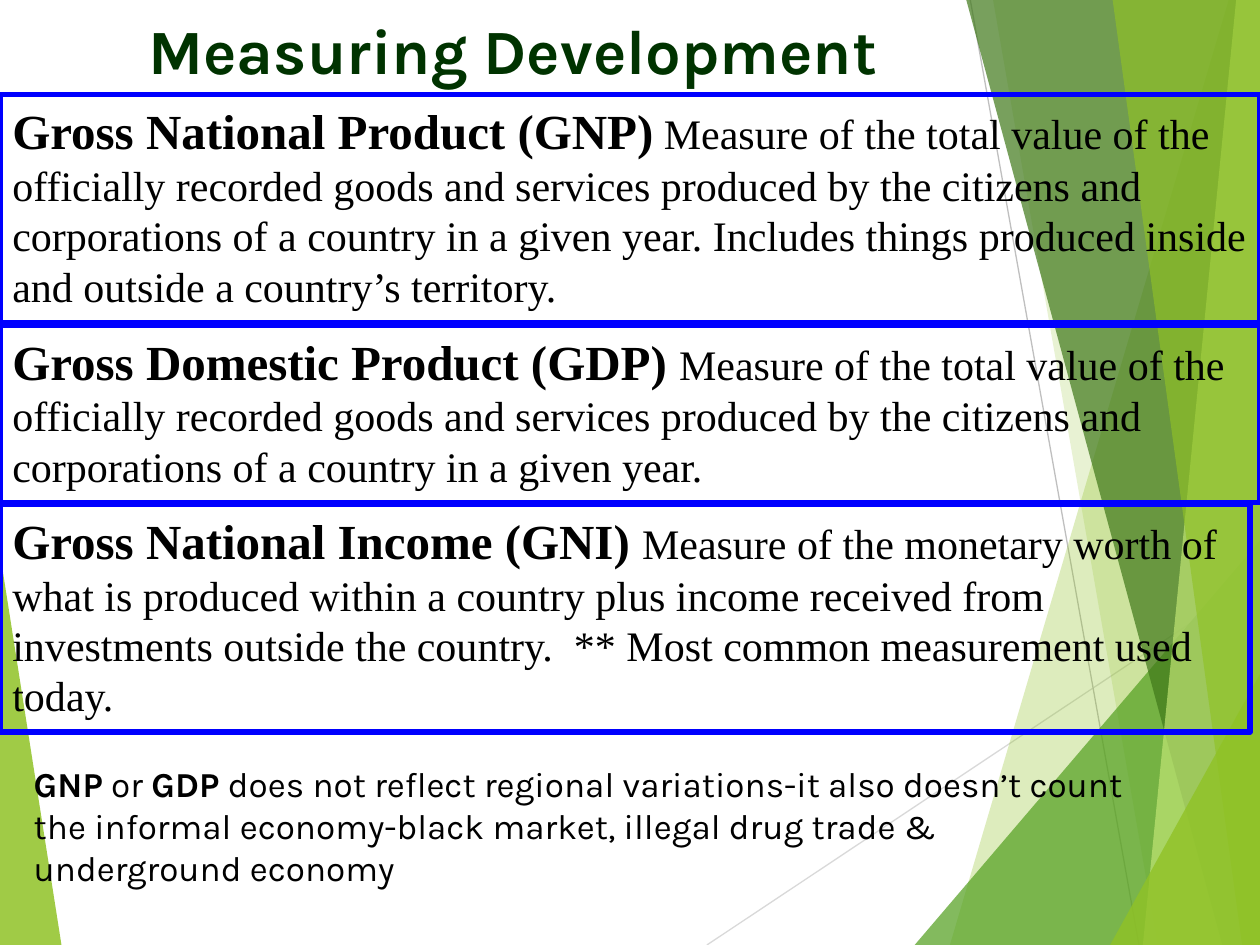
from lxml import etree
from pptx import Presentation
from pptx.dml.color import RGBColor
from pptx.enum.shapes import MSO_CONNECTOR, MSO_SHAPE
from pptx.enum.text import MSO_ANCHOR, PP_ALIGN
from pptx.oxml.ns import qn
from pptx.util import Cm, Pt

LEFT, TOP = PP_ALIGN.LEFT, MSO_ANCHOR.TOP
STRAIGHT, RECTANGLE = MSO_CONNECTOR.STRAIGHT, MSO_SHAPE.RECTANGLE

THEME = {
    "title": {"name": "Karla", "size": Pt(36), "bold": True, "color": "003300"},
    "term": {"name": "Times New Roman", "size": Pt(28), "bold": True, "color": "000000"},
    "meaning": {"name": "Times New Roman", "size": Pt(24), "bold": False, "color": "000000"},
    "note": {"name": "Karla", "size": Pt(20), "bold": False, "color": "000000"},
    "note_term": {"name": "Karla", "size": Pt(20), "bold": True, "color": "000000"},
    "border": "0000FF",
    "lime": "90C226",
    "green": "54A021",
    "forest": "3F7819",
    "pale": "C0E474",
    "ray_light": "D9D9D9",
    "ray_dark": "BFBFBF",
}
WIDTH, HEIGHT = 25.4, 19.05


def add_run(paragraph, text, style):
    run = paragraph.add_run()
    run.text = text
    for key, value in THEME[style].items():
        if key == "color":
            run.font.color.rgb = RGBColor.from_string(value)
        else:
            setattr(run.font, key, value)


def set_frame(shape, **overrides):
    """Give a text frame the slide's common layout and return its first paragraph."""
    layout = {"word_wrap": True, "vertical_anchor": TOP, **overrides}
    for key, value in layout.items():
        setattr(shape.text_frame, key, value)
    paragraph = shape.text_frame.paragraphs[0]
    paragraph.alignment = LEFT
    return paragraph


prs = Presentation()
prs.slide_width, prs.slide_height = Cm(WIDTH), Cm(HEIGHT)
slide = prs.slides.add_slide(prs.slide_layouts[5])
shapes = slide.shapes

# Rays and translucent facets behind the text
rays = [
    ((14.25, HEIGHT), (WIDTH, 11.63), "ray_light"),
    ((19.56, 0), (22.96, HEIGHT), "ray_dark"),
]
for start, end, color in rays:
    ray = shapes.add_connector(STRAIGHT, *(Cm(value) for value in start + end))
    ray.line.color.rgb = RGBColor.from_string(THEME[color])
    ray.line.width = Pt(0.75)
    etree.SubElement(ray._element.spPr, qn("a:effectLst"))

right_top, right_bottom = (WIDTH, 0), (WIDTH, HEIGHT)
facets = [
    ("lime", 85, [(0, 11.15), (1.24, HEIGHT), (0, HEIGHT)]),
    ("lime", 30, [(24.77, 0), (19.15, HEIGHT), right_bottom, right_top]),
    ("lime", 20, [(20.02, 0), (23.34, HEIGHT), right_bottom, right_top]),
    ("green", 72, [(18.44, HEIGHT), (WIDTH, 10.9), right_bottom]),
    ("forest", 70, [(19.48, 0), (24.64, HEIGHT), right_bottom, right_top]),
    ("pale", 70, [(24.92, 0), (23.04, HEIGHT), right_bottom, right_top]),
    ("lime", 65, [(22.43, 0), (25.04, HEIGHT), right_bottom, right_top]),
    ("lime", 80, [(22.38, HEIGHT), (WIDTH, 13.59), right_bottom]),
]
for color, opacity, corners in facets:
    points = [(Cm(x), Cm(y)) for x, y in corners]
    outline = shapes.build_freeform(*points[0])
    outline.add_line_segments(points[1:], close=True)
    facet = outline.convert_to_shape()
    facet.shadow.inherit = False
    facet.line.fill.background()
    facet.fill.solid()
    facet.fill.fore_color.rgb = RGBColor.from_string(THEME[color])
    fill_color = facet._element.spPr.find(qn("a:solidFill"))[0]
    etree.SubElement(fill_color, qn("a:alpha"), val=str(opacity * 1000))

# Title
title = shapes.title
title.left, title.top, title.width, title.height = Cm(2.74), Cm(0), Cm(20.75), Cm(2.34)
add_run(set_frame(title, margin_top=Cm(0.23)), "Measuring Development", "title")

# Definitions
definitions = [
    (1.9, WIDTH, 4.6, "Gross National Product (GNP)",
     " Measure of the total value of the officially recorded goods and services produced "
     "by the citizens and corporations of a country in a given year. Includes things "
     "produced inside and outside a country’s territory."),
    (6.55, WIDTH, 3.58, "Gross Domestic Product (GDP) ",
     "Measure of the total value of the officially recorded goods and services produced "
     "by the citizens and corporations of a country in a given year."),
    (10.16, 25.2, 4.6, "Gross National Income (GNI) ",
     "Measure of the monetary worth of what is produced within a country plus income "
     "received from investments outside the country.  ** Most common measurement used today."),
]
for top, width, height, term, meaning in definitions:
    box = shapes.add_shape(RECTANGLE, Cm(0), Cm(top), Cm(width), Cm(height))
    box.shadow.inherit = False
    box.fill.background()
    box.line.color.rgb = RGBColor.from_string(THEME["border"])
    box.line.width = Pt(3)
    paragraph = set_frame(box)
    add_run(paragraph, term, "term")
    add_run(paragraph, meaning, "meaning")

# Limits of the measures
note = shapes.add_textbox(Cm(0.43), Cm(15.24), Cm(23.06), Cm(3.8))
paragraph = set_frame(note)
for text, style in [
    ("GNP", "note_term"),
    (" or ", "note"),
    ("GDP", "note_term"),
    (" does not reflect regional variations-it also doesn’t count the informal "
     "economy-black market, illegal drug trade & underground economy", "note"),
]:
    add_run(paragraph, text, style)

prs.save("out.pptx")
